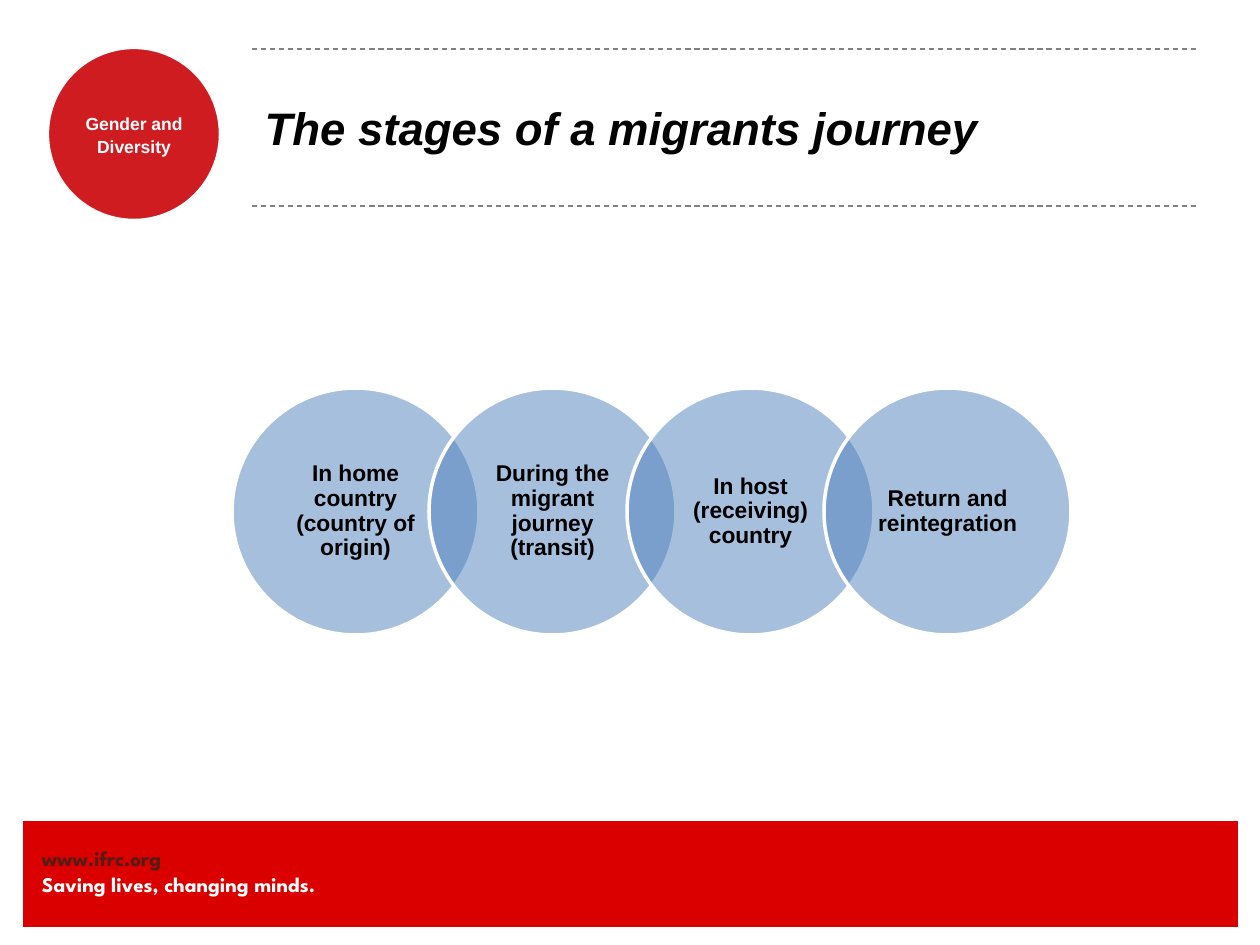
from lxml.etree import SubElement
from pptx import Presentation
from pptx.dml.color import RGBColor as Rgb
from pptx.enum.dml import MSO_LINE as Dash
from pptx.enum.shapes import MSO_CONNECTOR as Link, MSO_SHAPE as Kind
from pptx.enum.text import MSO_ANCHOR as Anchor, PP_ALIGN as Align
from pptx.oxml.ns import qn
from pptx.util import Pt

SCALE = 914400 / 126
COLORS = {
    "white": "FFFFFF", "black": "000000", "band": "DB0000", "badge": "CF1C21",
    "link": "551C15", "rule": "808080", "stage": "4F81BD",
}
STAGES = [
    "In home country (country of origin)",
    "During the migrant journey (transit)",
    "In host (receiving) country",
    "Return and reintegration",
]


def px(*vals):
    return [round(val * SCALE) for val in vals]


def tint(name):
    return Rgb.from_string(COLORS[name])


def write(shape, text, size, colors=("black",), face="Arial", bold=True,
          slant=False, align=Align.LEFT, anchor=Anchor.MIDDLE, inset=None, gap=None):
    frame = shape.text_frame
    frame.word_wrap = True
    frame.vertical_anchor = anchor
    if inset:
        side, edge = px(*inset)
        frame.margin_left = frame.margin_right = side
        frame.margin_top = frame.margin_bottom = edge
    frame.text = text
    for par, color in zip(frame.paragraphs, colors):
        par.alignment = align
        if gap:
            par.line_spacing = gap
        font = par.font
        font.name, font.size = face, Pt(size)
        font.bold, font.italic = bold, slant
        font.color.rgb = tint(color)


def draw(slide, kind, box, color, width, alpha=None):
    shape = slide.shapes.add_shape(kind, *px(*box))
    shape.shadow.inherit = False
    shape.fill.solid()
    shape.fill.fore_color.rgb = tint(color)
    shape.line.color.rgb = tint("white")
    shape.line.width = Pt(width)
    if alpha:
        fill = shape.fill._xPr.find(qn("a:solidFill"))
        SubElement(fill[0], qn("a:alpha"), val=str(alpha * 1000))
    return shape


def rule(slide, left, right, top):
    line = slide.shapes.add_connector(Link.STRAIGHT, *px(left, top, right, top))
    line.line.color.rgb = tint("rule")
    line.line.width = Pt(0.75)
    line.line.dash_style = Dash.DASH
    SubElement(line._element.spPr, qn("a:effectLst"))


def footer(slide):
    draw(slide, Kind.RECTANGLE, (22, 820, 1217, 108), "band", 0.75)
    box = slide.shapes.add_textbox(*px(42, 846, 431, 50))
    write(box, "www.ifrc.org\nSaving lives, changing minds.", 12,
          colors=("link", "white"), face="League Spartan",
          anchor=Anchor.TOP, inset=(0, 0))


def header(slide):
    badge = draw(slide, Kind.OVAL, (47, 47, 174, 174), "badge", 2.5)
    write(badge, "Gender and Diversity", 10, colors=("white",),
          align=Align.CENTER, inset=(0, 0), gap=1.1)
    for top in (49, 206):
        rule(slide, 252, 1197, top)
    title = slide.shapes.title
    title.left, title.top, title.width, title.height = px(252, 48, 945, 158)
    write(title, "The stages of a migrants journey", 26, slant=True)


def stages(slide):
    for num, text in enumerate(STAGES):
        left = 232 + 395 * num // 2
        disc = draw(slide, Kind.OVAL, (left, 388, 247, 247), "stage", 2, alpha=50)
        write(disc, text, 13, align=Align.CENTER, inset=(14, 2), gap=0.9)


def main():
    deck = Presentation()
    deck.slide_width, deck.slide_height = px(1260, 945)
    slide = deck.slides.add_slide(deck.slide_layouts[5])
    footer(slide)
    header(slide)
    stages(slide)
    deck.save("out.pptx")


if __name__ == "__main__":
    main()
